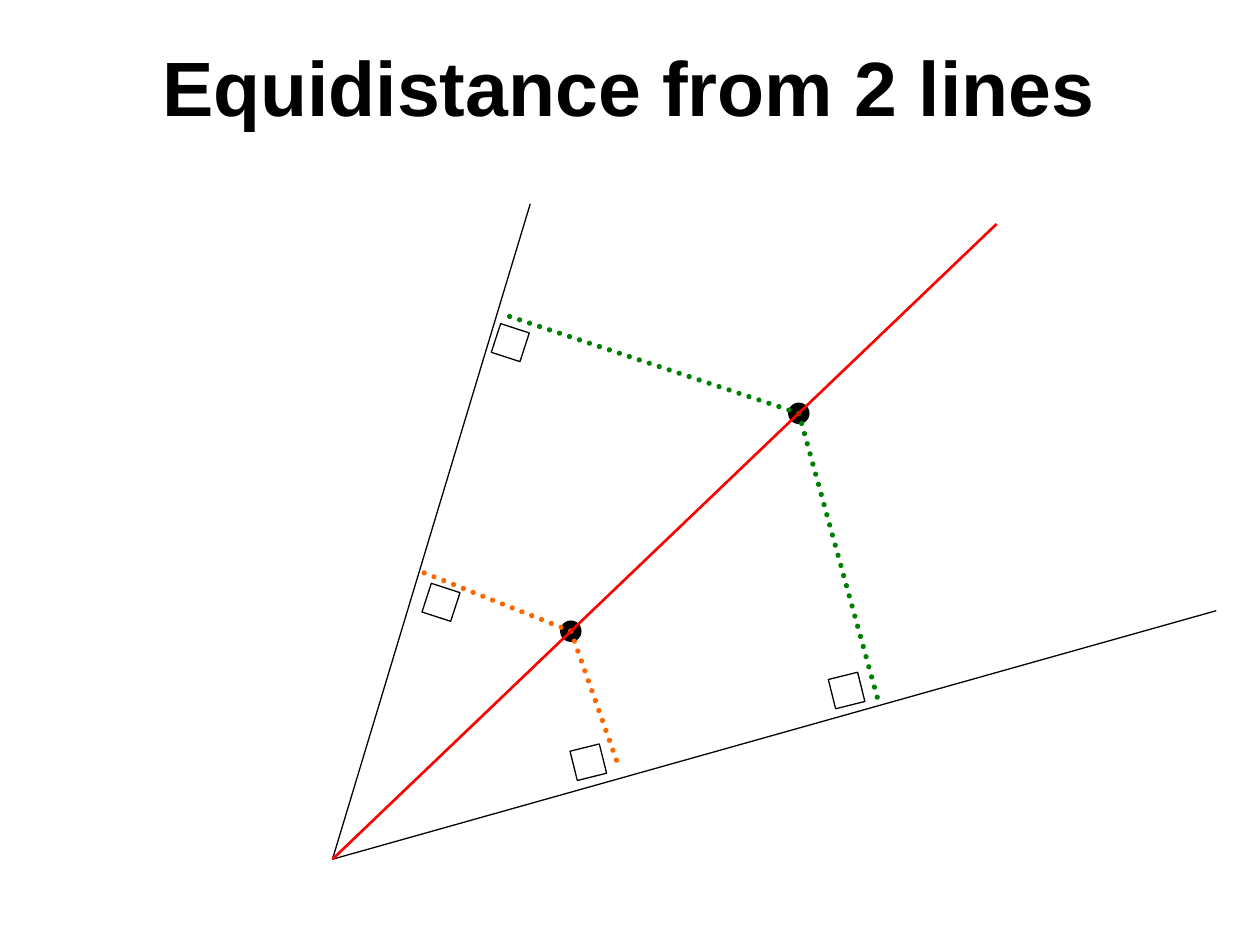
import pptx
import pptx.dml.color
import pptx.enum.dml
import pptx.enum.shapes
import pptx.enum.text
import pptx.oxml
import pptx.oxml.ns
import pptx.util

Pt = pptx.util.Pt
SHAPES = pptx.enum.shapes.MSO_SHAPE

BLACK, WHITE, RED, ORANGE, GREEN = "000000", "FFFFFF", "FF0000", "FF6600", "008000"

VERTEX = (190, 491)
UPPER_END = (303, 116.5)
LOWER_END = (695, 349)
BISECTOR_END = (569.5, 128)
UPPER_ANGLE, LOWER_ANGLE = 108, 76

# Each point on the bisector, its feet on both lines and the right-angle marks.
DISTANCES = [
    dict(point=(326.2, 360.7), color=ORANGE, feet=[(241.2, 326.9), (354.2, 439.9)],
         marks=[(252, 344.2), (336.2, 435.6)]),
    dict(point=(456.5, 236.2), color=GREEN, feet=[(286.6, 179.3), (501.8, 400.3)],
         marks=[(291.6, 195.8), (483.8, 394.6)]),
]


def rgb(color):
    return pptx.dml.color.RGBColor.from_string(color)


class Diagram:
    font = "Arial"
    thin = 0.75
    dot_size = 11.5
    mark_size = 17.25

    def __init__(self, slide):
        self.slide = slide

    def text(self, words, left, top, width, height, *, size, color=BLACK, bold=False):
        box = self.slide.shapes.add_textbox(Pt(left), Pt(top), Pt(width), Pt(height))
        frame = box.text_frame
        frame.word_wrap = True
        frame.vertical_anchor = pptx.enum.text.MSO_ANCHOR.MIDDLE
        para = frame.paragraphs[0]
        para.alignment = pptx.enum.text.PP_ALIGN.CENTER
        span = para.add_run()
        span.text = words
        span.font.name = self.font
        span.font.size = Pt(size)
        span.font.bold = bold
        span.font.color.rgb = rgb(color)

    def line(self, start, end, color=BLACK, width=thin, dotted=False):
        connector = self.slide.shapes.add_connector(
            pptx.enum.shapes.MSO_CONNECTOR.STRAIGHT, *map(Pt, start + end))
        connector.line.color.rgb = rgb(color)
        connector.line.width = Pt(width)
        properties = connector._element.spPr
        if dotted:
            connector.line.dash_style = pptx.enum.dml.MSO_LINE.ROUND_DOT
            properties.find(pptx.oxml.ns.qn("a:ln")).set("cap", "rnd")
        properties.append(pptx.oxml.parse_xml(
            f"<a:effectLst {pptx.oxml.ns.nsdecls('a')}/>"))

    def shape(self, kind, center, size, fill, rotation=0):
        """Add a square-sized shape around its center."""
        x, y = center
        shape = self.slide.shapes.add_shape(
            kind, Pt(x - size / 2), Pt(y - size / 2), Pt(size), Pt(size))
        shape.rotation = rotation
        shape.shadow.inherit = False
        shape.fill.solid()
        shape.fill.fore_color.rgb = rgb(fill)
        shape.line.color.rgb = rgb(BLACK)
        shape.line.width = Pt(self.thin)

    def dot(self, center):
        self.shape(SHAPES.OVAL, center, self.dot_size, BLACK)

    def right_angle(self, center, rotation):
        self.shape(SHAPES.RECTANGLE, center, self.mark_size, WHITE, rotation)


def main():
    deck = pptx.Presentation()
    deck.slide_width, deck.slide_height = Pt(720), Pt(540)
    diagram = Diagram(deck.slides.add_slide(deck.slide_layouts[6]))

    diagram.text("Equidistance from 2 lines", 35.5, 3.75, 648, 90, size=44, bold=True)
    for distance in DISTANCES:
        diagram.dot(distance["point"])
    for end in (LOWER_END, UPPER_END):
        diagram.line(end, VERTEX)
    for distance in DISTANCES:
        for foot in distance["feet"]:
            diagram.line(distance["point"], foot, distance["color"], 3, dotted=True)
        for mark, angle in zip(distance["marks"], (UPPER_ANGLE, LOWER_ANGLE)):
            diagram.right_angle(mark, angle)
    diagram.line(BISECTOR_END, VERTEX, RED, 1.5)

    deck.save("out.pptx")


if __name__ == "__main__":
    main()
